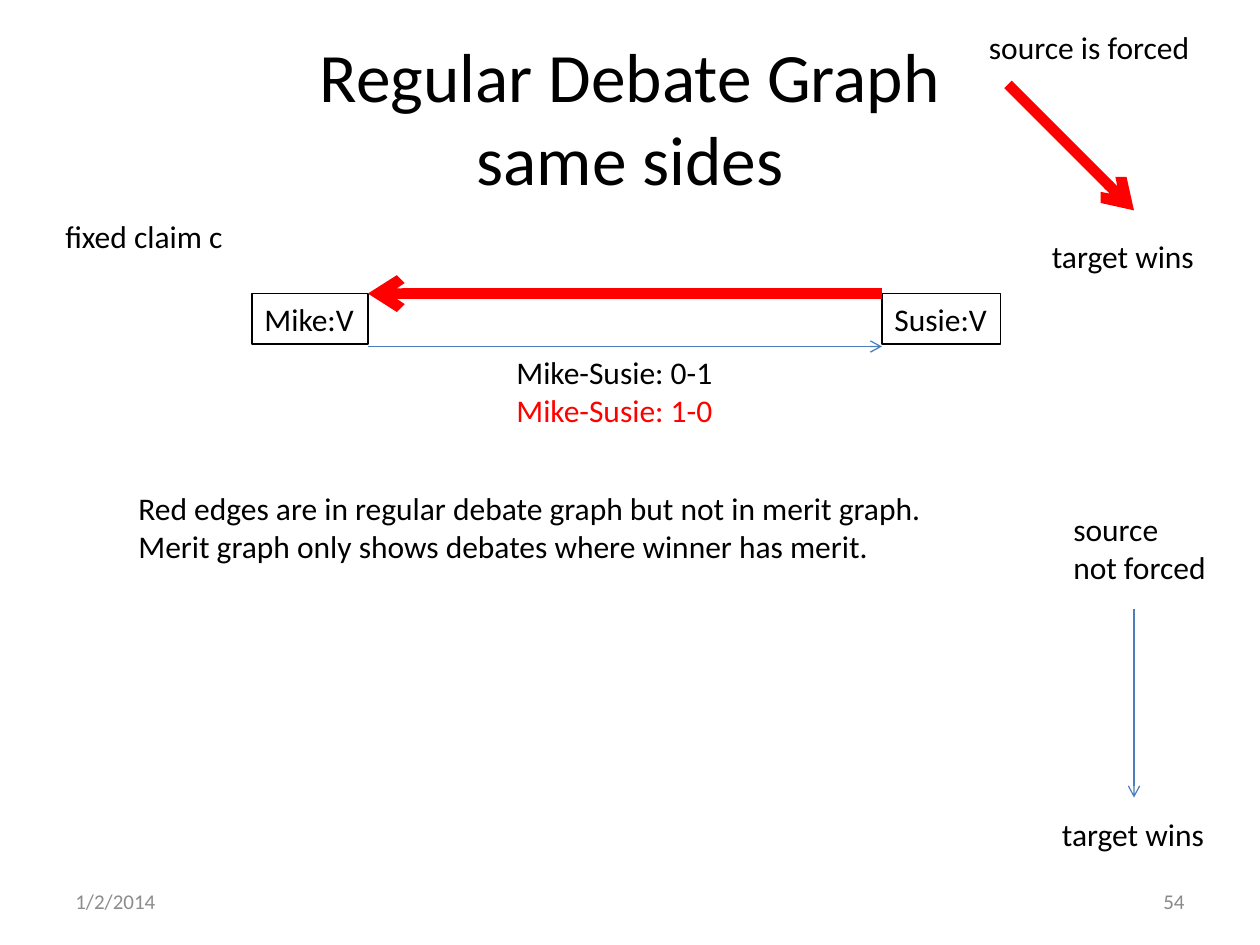
from pptx import Presentation
from pptx.dml.color import RGBColor
from pptx.enum.shapes import MSO_CONNECTOR as Connector
from pptx.enum.text import MSO_ANCHOR as Anchor, MSO_AUTO_SIZE as AutoSize, PP_ALIGN as Align
from pptx.oxml.ns import qn
from pptx.util import Inches, Pt
from lxml.etree import SubElement

BLACK, RED, BLUE = "000000", "FF0000", "4B7EBC"


def color(value):
    return RGBColor.from_string(value)


def write(frame, *lines, size=18, ink=BLACK, align=Align.LEFT, font="Calibri"):
    for index, line in enumerate(lines):
        paragraph = frame.paragraphs[0] if index == 0 else frame.add_paragraph()
        paragraph.alignment = align
        text, line_ink = line if isinstance(line, tuple) else (line, ink)
        run = paragraph.add_run()
        run.text = text
        run.font.name = font
        run.font.size = Pt(size)
        run.font.color.rgb = color(line_ink)


class DebateSlide:
    def __init__(self, presentation):
        self.slide = presentation.slides.add_slide(presentation.slide_layouts[6])

    def block(self, left, top, width, height, *lines, **style):
        shape = self.slide.shapes.add_textbox(*map(Inches, (left, top, width, height)))
        shape.text_frame.word_wrap = True
        shape.text_frame.vertical_anchor = Anchor.MIDDLE
        write(shape.text_frame, *lines, **style)

    def label(self, left, top, width, *lines):
        height = 0.4 if len(lines) == 1 else 0.71
        shape = self.slide.shapes.add_textbox(*map(Inches, (left, top, width, height)))
        shape.text_frame.word_wrap = False
        shape.text_frame.auto_size = AutoSize.SHAPE_TO_FIT_TEXT
        write(shape.text_frame, *lines)
        return shape

    def node(self, left, top, width, text):
        shape = self.label(left, top, width, text)
        shape.line.color.rgb = color(BLACK)
        shape.line.width = Pt(0.75)

    def arrow(self, start, end, ink=BLUE, width=0.75):
        connector = self.slide.shapes.add_connector(
            Connector.STRAIGHT, *map(Inches, start + end))
        connector.line.color.rgb = color(ink)
        connector.line.width = Pt(width)
        SubElement(connector.line._get_or_add_ln(), qn("a:tailEnd"), type="arrow")
        SubElement(connector._element.spPr, qn("a:effectLst"))


def main():
    presentation = Presentation()
    presentation.slide_width = Inches(10)
    presentation.slide_height = Inches(7.5)
    debate = DebateSlide(presentation)

    debate.block(0.5, 0.3, 9, 1.25, "Regular Debate Graph", "same sides",
                 size=39.6, align=Align.CENTER)
    debate.label(0.42, 1.67, 1.47, "fixed claim c")

    debate.node(2, 2.33, 0.92, "Mike:V")
    debate.node(7, 2.33, 0.94, "Susie:V")
    debate.arrow((2.92, 2.75), (7, 2.75))
    debate.arrow((7, 2.33), (2.92, 2.33), RED, 6)
    debate.label(4, 2.75, 1.77, "Mike-Susie: 0-1", ("Mike-Susie: 1-0", RED))
    debate.label(1, 3.83, 6.44,
                 "Red edges are in regular debate graph but not in merit graph.",
                 "Merit graph only shows debates where winner has merit.")

    debate.label(7.75, 0.17, 1.81, "source is forced")
    debate.arrow((8, 0.67), (9, 1.67), RED, 6)
    debate.label(8.25, 1.83, 1.34, "target wins")

    debate.label(8.42, 4, 1.27, "source", "not forced")
    debate.arrow((9, 4.83), (9, 6.33))
    debate.label(8.33, 6.42, 1.34, "target wins")

    debate.block(0.5, 6.95, 2.33, 0.4, "1/2/2014", size=12, ink="8C8C8C")
    debate.block(7.17, 6.95, 2.33, 0.4, "54", size=12, ink="898989", align=Align.RIGHT)

    presentation.save("out.pptx")


if __name__ == "__main__":
    main()
